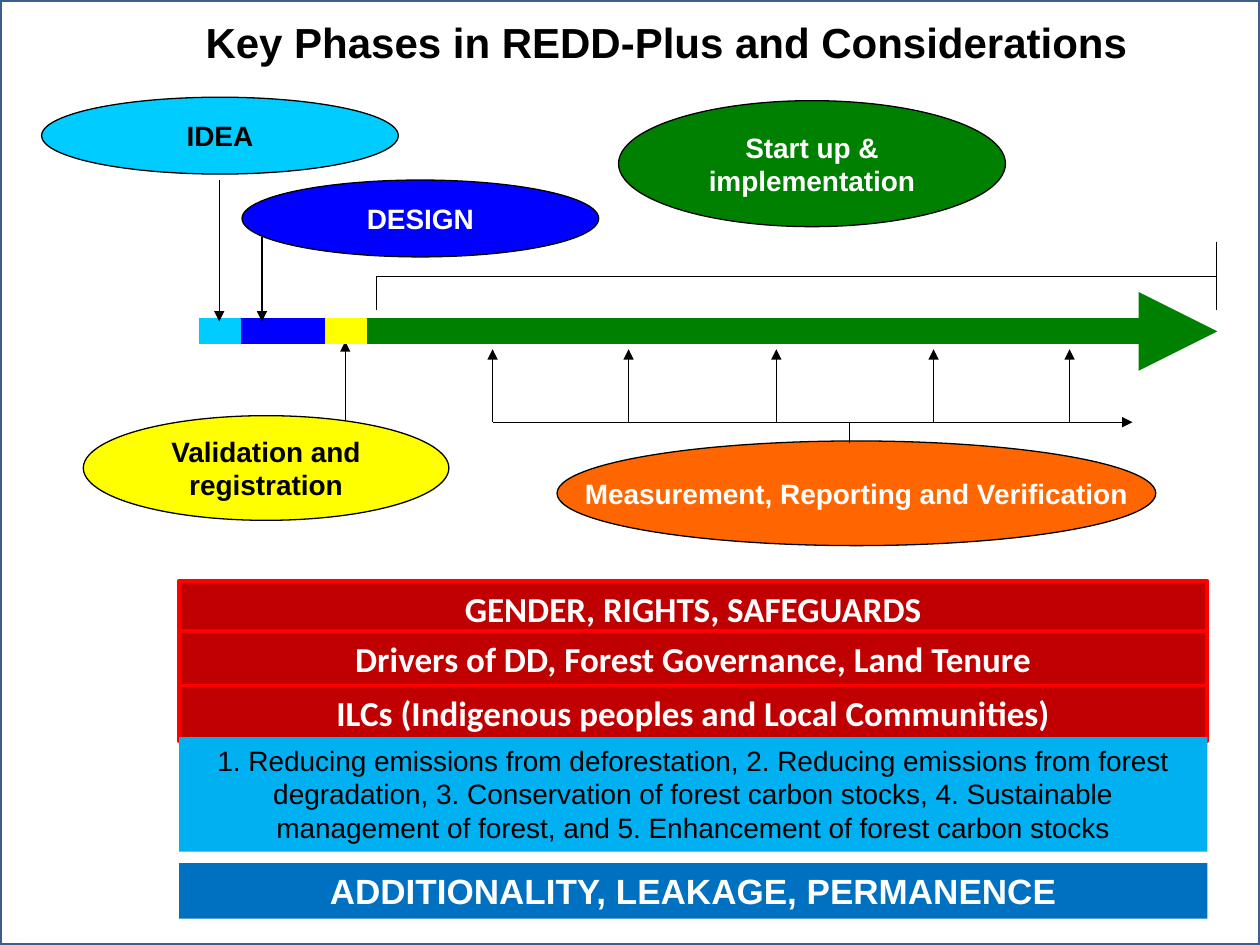
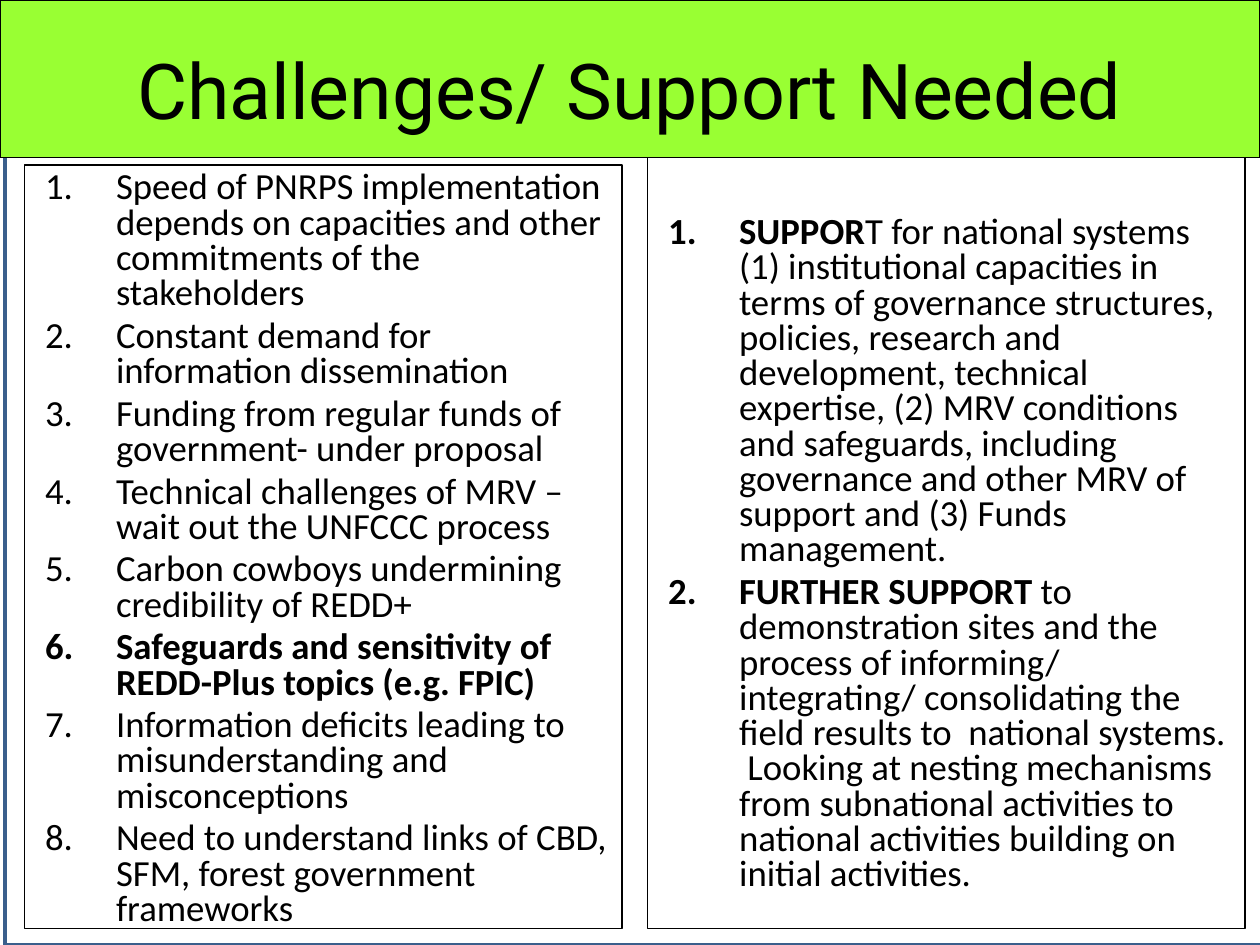
from lxml.etree import SubElement
from pptx import Presentation
from pptx.dml.color import RGBColor
from pptx.enum.shapes import MSO_CONNECTOR, MSO_SHAPE
from pptx.enum.text import MSO_ANCHOR, MSO_AUTO_SIZE, PP_ALIGN
from pptx.oxml.ns import qn
from pptx.util import Cm, Pt

COLORS = {
    "black": "000000", "white": "FFFFFF", "frame": "3A5F8C",
    "idea": "00CCFF", "design": "0000FF", "validation": "FFFF00",
    "startup": "008000", "mrv": "FF6600", "lime": "99FF33",
    "crimson": "C00000", "red": "FF0000", "sky": "00B0F0", "blue": "0070C0",
}
SLIDE_WIDTH, SLIDE_HEIGHT = 25.4, 19.05
TITLE_ONLY = 5
TIMELINE_Y = 6.68

CHALLENGES = [
    [("Speed of PNRPS implementation depends on capacities and other "
      "commitments of the stakeholders", False)],
    [("Constant demand for information dissemination", False)],
    [("Funding from regular funds of government- under proposal", False)],
    [("Technical challenges of MRV – wait out the UNFCCC process", False)],
    [("Carbon cowboys undermining credibility of REDD+", False)],
    [("Safeguards and sensitivity of REDD-Plus topics (e.g. FPIC)", True)],
    [("Information deficits leading to misunderstanding and misconceptions", False)],
    [("Need to understand links of CBD, SFM, forest government frameworks", False)],
]
SUPPORT = [
    [("SUPPOR", True),
     ("T for national systems (1) institutional capacities in terms of governance "
      "structures, policies, research and development, technical expertise, (2) MRV "
      "conditions and safeguards, including governance and other MRV of support and "
      "(3) Funds management.", False)],
    [("FURTHER SUPPORT ", True),
     ("to demonstration sites and the process of informing/ integrating/ "
      "consolidating the field results to  national systems.  Looking at nesting "
      "mechanisms from subnational activities to national activities building on "
      "initial activities.", False)],
]


def rgb(name):
    return RGBColor.from_string(COLORS[name])


def format_span(span, size, font, color, bold):
    span.font.size = Pt(size)
    span.font.name = font
    span.font.bold = bold
    span.font.color.rgb = rgb(color)


def write(box, text, size, font="Arial", color="black", bold=True,
          anchor=MSO_ANCHOR.TOP, wrap=True):
    frame = box.text_frame
    frame.text = text
    frame.word_wrap = wrap
    frame.auto_size = MSO_AUTO_SIZE.NONE
    frame.vertical_anchor = anchor
    for paragraph in frame.paragraphs:
        paragraph.alignment = PP_ALIGN.CENTER
        for span in paragraph.runs:
            format_span(span, size, font, color, bold)


def add_box(page, kind, place, fill=None, line=None, line_width=0.75):
    box = page.shapes.add_shape(kind, *map(Cm, place))
    box.shadow.inherit = False
    if fill:
        box.fill.solid()
        box.fill.fore_color.rgb = rgb(fill)
    else:
        box.fill.background()
    if line:
        box.line.color.rgb = rgb(line)
        box.line.width = Pt(line_width)
    else:
        box.line.fill.background()
    return box


def add_line(page, start, end, color="black", width=0.75, arrow=False):
    line = page.shapes.add_connector(
        MSO_CONNECTOR.STRAIGHT, *map(Cm, (*start, *end)))
    line.line.color.rgb = rgb(color)
    line.line.width = Pt(width)
    if arrow:
        SubElement(line.line._get_or_add_ln(), qn("a:tailEnd"), type="triangle")
    SubElement(line._element.spPr, qn("a:effectLst"))


def add_page(deck, frame_left=0):
    page = deck.slides.add_slide(deck.slide_layouts[TITLE_ONLY])
    add_box(page, MSO_SHAPE.RECTANGLE, (frame_left, 0, SLIDE_WIDTH, SLIDE_HEIGHT),
            "white", "frame", 2)
    return page


def place_title(page, text, place, size, **style):
    title = page.shapes.title
    title.left, title.top, title.width, title.height = map(Cm, place)
    write(title, text, size, **style)
    page.shapes._spTree.append(title._element)


def add_phase(page, text, place, fill, color="white", wrap=False):
    phase = add_box(page, MSO_SHAPE.OVAL, place, fill, "black")
    write(phase, text, 16, color=color, anchor=MSO_ANCHOR.MIDDLE, wrap=wrap)


def add_band(page, text, top, height, fill, line=None, **style):
    band = add_box(page, MSO_SHAPE.RECTANGLE, (3.61, top, 20.73, height),
                   fill, line, 2.25)
    write(band, text, **style)


def add_timeline(page):
    stops = [4.01, 4.85, 6.55, 7.39, 22]
    stages = ["idea", "design", "validation", "startup"]
    for stage, left, right in zip(stages, stops, stops[1:]):
        add_line(page, (left, TIMELINE_Y), (right, TIMELINE_Y), stage, 15)
    add_line(page, (21.79, TIMELINE_Y), (24.54, TIMELINE_Y), "startup", 15, True)
    for x, start, end in [(4.42, 3.63, 6.48), (5.28, 4.78, 6.48)]:
        add_line(page, (x, start), (x, end), arrow=True)
    brace = add_box(page, MSO_SHAPE.RIGHT_BRACE, (15.37, -2.9, 1.37, 16.94),
                    line="black")
    brace.rotation = 270
    brace.adjustments[0] = 58.44
    brace.adjustments[1] = 2.5


def add_reporting_cycle(page):
    base = 8.51
    add_line(page, (9.93, base), (22.83, base), arrow=True)
    add_phase(page, "Measurement, Reporting and Verification",
              (11.23, 8.89, 12.07, 2.11), "mrv")
    for x in (9.93, 12.67, 15.65, 18.82, 21.56):
        add_line(page, (x, base), (x, 7.04), arrow=True)
    add_line(page, (17.12, 8.94), (17.12, base))


def add_numbered_list(page, items, place, top_inset=0.13):
    box = add_box(page, MSO_SHAPE.RECTANGLE, place, line="black")
    frame = box.text_frame
    frame.word_wrap = True
    frame.vertical_anchor = MSO_ANCHOR.TOP
    frame.margin_top = Cm(top_inset)
    for index, item in enumerate(items):
        paragraph = frame.add_paragraph() if index else frame.paragraphs[0]
        properties = paragraph._p.get_or_add_pPr()
        properties.set("marL", str(Cm(1.59)))
        properties.set("indent", str(-Cm(1.43)))
        SubElement(properties, qn("a:buFont"), typeface="+mj-lt")
        SubElement(properties, qn("a:buAutoNum"), type="arabicPeriod")
        paragraph.alignment = PP_ALIGN.LEFT
        paragraph.line_spacing = 0.8
        paragraph.space_before = Pt(4.2 if index else 0)
        for text, bold in item:
            span = paragraph.add_run()
            span.text = text
            format_span(span, 21, "Calibri", "black", bold)


def build_phases(deck):
    page = add_page(deck)
    add_line(page, (6.96, 8.81), (6.96, 6.88), arrow=True)
    add_phase(page, "IDEA", (0.84, 1.96, 7.19, 1.55), "idea", "black")
    add_phase(page, "Validation and\nregistration", (1.68, 8.38, 7.37, 2.11),
              "validation", "black")
    add_phase(page, "DESIGN", (4.88, 3.63, 7.19, 1.55), "design")
    add_phase(page, "Start up & implementation", (12.47, 2.03, 7.8, 2.54),
              "startup", wrap=True)
    add_timeline(page)
    add_reporting_cycle(page)
    place_title(page, "Key Phases in REDD-Plus and Considerations",
                (3.81, 0.2, 19.25, 1.27), 24)
    for text, top in [
        ("GENDER, RIGHTS, SAFEGUARDS", 11.71),
        ("Drivers of DD, Forest Governance, Land Tenure", 12.73),
        ("ILCs (Indigenous peoples and Local Communities)", 13.82),
    ]:
        add_band(page, text, top, 1.12, "crimson", "red",
                 size=20, font="Calibri", color="white")
    add_band(page, "1. Reducing emissions from deforestation, 2. Reducing emissions "
             "from forest degradation, 3. Conservation of forest carbon stocks, "
             "4. Sustainable management of forest, and 5. Enhancement of forest "
             "carbon stocks", 14.86, 2.31, "sky", size=16, bold=False)
    add_band(page, "ADDITIONALITY, LEAKAGE, PERMANENCE", 17.4, 1.12, "blue",
             size=20, color="white")


def build_challenges(deck):
    page = add_page(deck, frame_left=0.1)
    add_box(page, MSO_SHAPE.RECTANGLE, (0, 0, SLIDE_WIDTH, 3.18), "lime", "black")
    place_title(page, "Challenges/ Support Needed", (1.27, 0.2, 22.86, 3.18), 44,
                font="Roboto", bold=False, anchor=MSO_ANCHOR.MIDDLE)
    add_numbered_list(page, CHALLENGES, (0.5, 3.33, 12.04, 15.39))
    add_numbered_list(page, SUPPORT, (13.06, 3.18, 12.04, 15.54), top_inset=1.18)


def main():
    deck = Presentation()
    deck.slide_width, deck.slide_height = Cm(SLIDE_WIDTH), Cm(SLIDE_HEIGHT)
    build_phases(deck)
    build_challenges(deck)
    deck.save("out.pptx")


if __name__ == "__main__":
    main()
